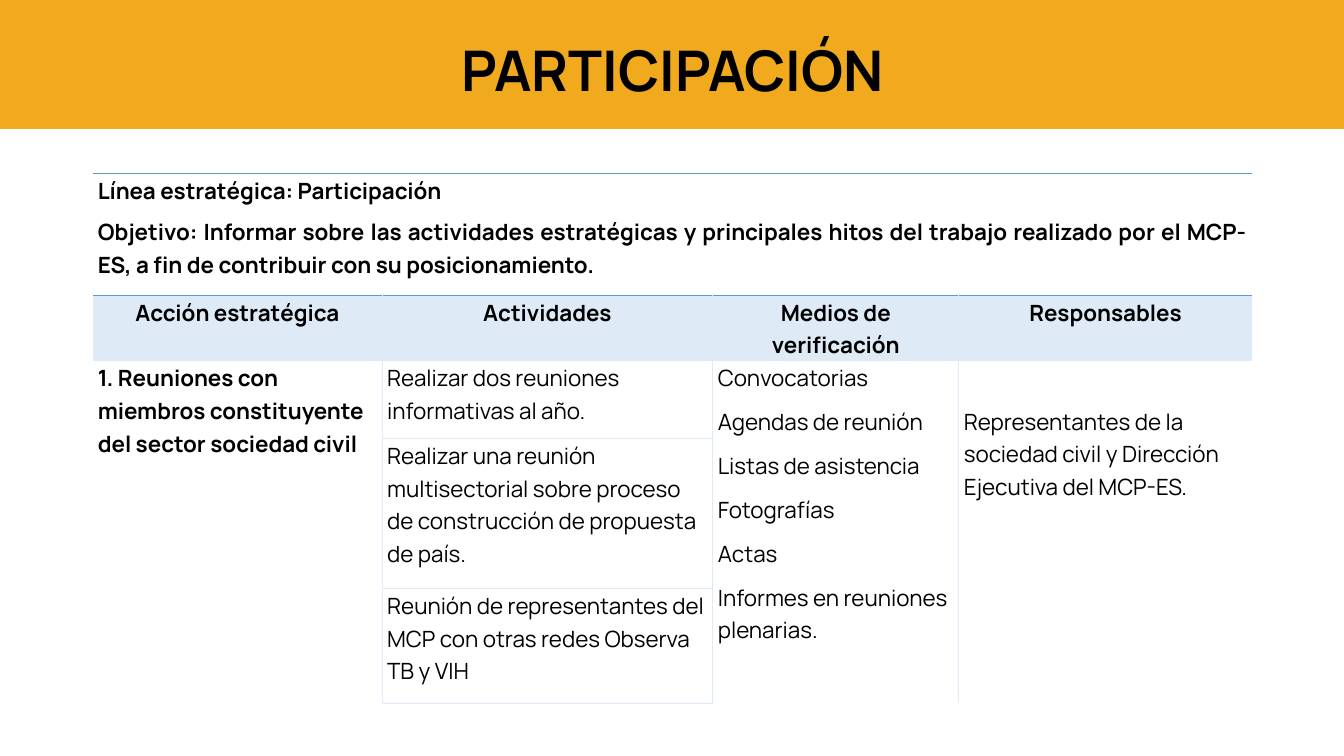
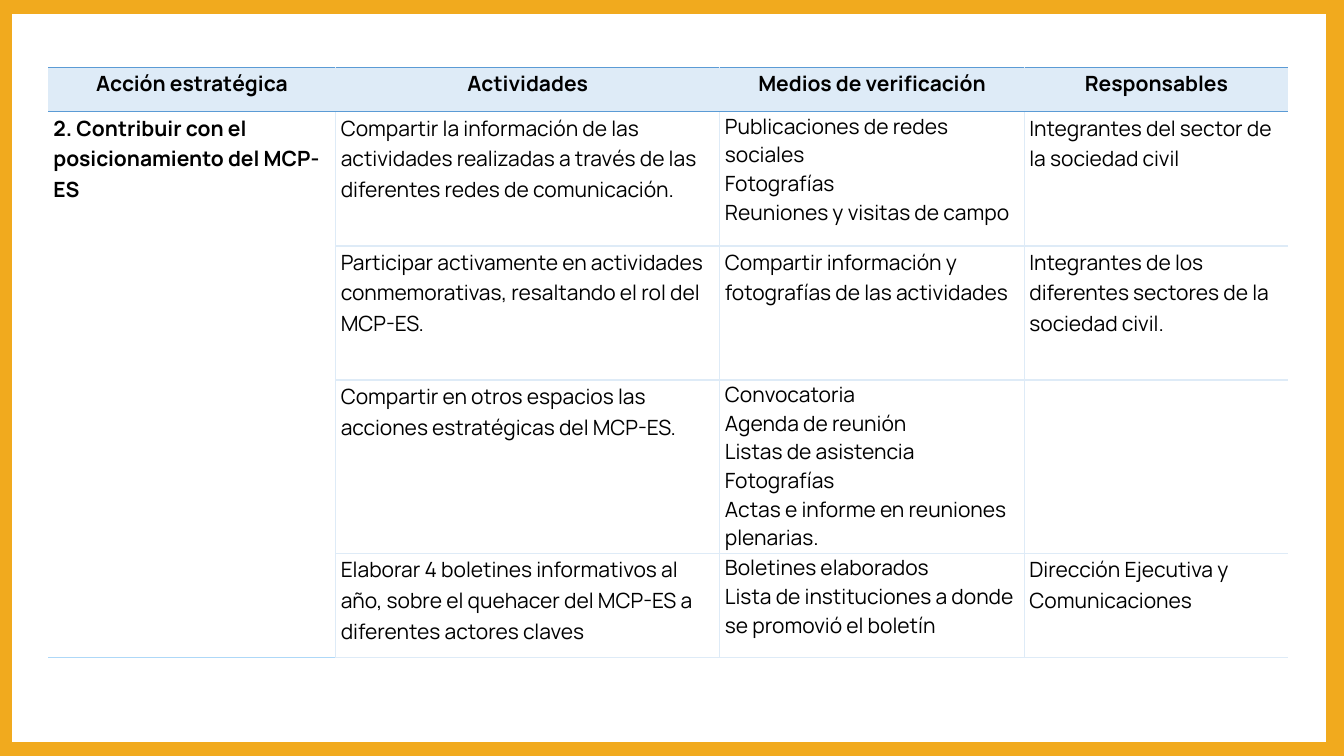
import lxml.etree
import pptx
import pptx.dml.color
import pptx.enum.shapes
import pptx.enum.text
import pptx.oxml.ns
import pptx.util

Inches = pptx.util.Inches
Align = pptx.enum.text.PP_ALIGN
Anchor = pptx.enum.text.MSO_ANCHOR

COLORS = {
    "amber": "F1AA1E",
    "white": "FFFFFF",
    "black": "000000",
    "header": "DEEBF7",
    "blue": "5B9BD5",
    "sky": "AED8F8",
}
FONT = "Manrope"
SLIDE_WIDTH, SLIDE_HEIGHT = 13.33, 7.5
RULES = {"B": "blue", "P": "header", "S": "sky", "-": None}
HEADINGS = ["Acción estratégica", "Actividades", "Medios de verificación", "Responsables"]

PARTICIPATION = {
    "box": (0.92, 1.72, 11.5, 5.26),
    "columns": [2.87, 3.28, 2.44, 2.91],
    "rows": [1.21, 0.65, 0.77, 1.49, 1.14],
    "size": 16,
    "header_row": 1,
    "tight_lists": False,
    "rules": ["BBBB", "BBBB", "----", "-P--", "-P--", "BPBB"],
    "merges": [((0, 0), (0, 3)), ((2, 0), (4, 0)), ((2, 2), (4, 2)), ((2, 3), (4, 3))],
    "texts": [
        ["Línea estratégica: Participación\n"
         "Objetivo: Informar sobre las actividades estratégicas y principales hitos del "
         "trabajo realizado por el MCP-ES, a fin de contribuir con su posicionamiento."],
        HEADINGS,
        ["1. Reuniones con miembros constituyente del sector sociedad civil",
         "Realizar dos reuniones informativas al año.",
         "Convocatorias\nAgendas de reunión\nListas de asistencia\nFotografías\nActas\n"
         "Informes en reuniones plenarias.",
         "Representantes de la sociedad civil y Dirección Ejecutiva del MCP-ES."],
        ["", "Realizar una reunión multisectorial sobre proceso de construcción de "
         "propuesta de país."],
        ["", "Reunión de representantes del MCP con otras redes Observa TB y VIH"],
    ],
}

POSITIONING = {
    "box": (0.48, 0.67, 12.3, 5.85),
    "columns": [2.85, 3.81, 3.02, 2.62],
    "rows": [0.44, 1.33, 1.33, 1.72, 1.03],
    "size": 15,
    "header_row": 0,
    "tight_lists": True,
    "rules": ["BBBB", "BBBB", "-PPP", "-PPP", "-PPP", "SPPP"],
    "merges": [((1, 0), (3, 0))],
    "texts": [
        HEADINGS,
        ["2. Contribuir con el posicionamiento del MCP-ES",
         "Compartir la información de las actividades realizadas a través de las "
         "diferentes redes de comunicación.",
         "Publicaciones de redes sociales\nFotografías\nReuniones y visitas de campo",
         "Integrantes del sector de la sociedad civil"],
        ["", "Participar activamente en actividades conmemorativas, resaltando el rol del MCP-ES.",
         "Compartir información y fotografías de las actividades",
         "Integrantes de los diferentes sectores de la sociedad civil."],
        ["", "Compartir en otros espacios las acciones estratégicas del MCP-ES.",
         "Convocatoria\nAgenda de reunión\nListas de asistencia\nFotografías\n"
         "Actas e informe en reuniones plenarias."],
        ["", "Elaborar 4 boletines informativos al año, sobre el quehacer del MCP-ES a "
         "diferentes actores claves",
         "Boletines elaborados\nLista de instituciones a donde se promovió el boletín",
         "Dirección Ejecutiva y Comunicaciones"],
    ],
}


def rgb(name):
    """Return the named palette colour."""
    return pptx.dml.color.RGBColor.from_string(COLORS[name])


def style_para(para, size, bold, align, line_spacing, space_after):
    """Format a paragraph and its runs."""
    para.alignment = align
    para.line_spacing = line_spacing
    para.space_after = pptx.util.Pt(space_after)
    for span in para.runs:
        span.font.name = FONT
        span.font.size = pptx.util.Pt(size)
        span.font.bold = bold
        span.font.color.rgb = rgb("black")


def add_panel(page, box, color):
    """Add a flat filled rectangle."""
    panel = page.shapes.add_shape(
        pptx.enum.shapes.MSO_SHAPE.RECTANGLE, *(Inches(length) for length in box))
    panel.shadow.inherit = False
    panel.fill.solid()
    panel.fill.fore_color.rgb = rgb(color)
    panel.line.fill.background()


def add_title(page, text, box):
    """Place the title placeholder in its box."""
    title = page.shapes.title
    title.left, title.top, title.width, title.height = (Inches(length) for length in box)
    title.text_frame.text = text
    title.text_frame.vertical_anchor = Anchor.MIDDLE
    style_para(title.text_frame.paragraphs[0], 40, True, Align.CENTER, 0.9, 0)


def set_border(cell, side, color):
    """Draw one cell border, or hide it when there is no colour."""
    properties = cell._tc.get_or_add_tcPr()
    qn = pptx.oxml.ns.qn
    line = lxml.etree.SubElement(properties, qn("a:ln" + side), w=str(pptx.util.Pt(1)))
    if color is None:
        lxml.etree.SubElement(line, qn("a:noFill"))
    else:
        fill = lxml.etree.SubElement(line, qn("a:solidFill"))
        lxml.etree.SubElement(fill, qn("a:srgbClr"), val=COLORS[color])


def format_cell(cell, row, column, plan):
    """Apply borders, fill and margins to one cell."""
    has_sides = row >= plan["header_row"]
    last_column = len(plan["columns"]) - 1
    set_border(cell, "L", "header" if has_sides and column > 0 else None)
    set_border(cell, "R", "header" if has_sides and column < last_column else None)
    set_border(cell, "T", RULES[plan["rules"][row][column]])
    set_border(cell, "B", RULES[plan["rules"][row + 1][column]])
    cell.fill.solid()
    cell.fill.fore_color.rgb = rgb("header" if row == plan["header_row"] else "white")
    cell.margin_left = cell.margin_right = Inches(0.05)
    cell.margin_top = cell.margin_bottom = 0
    cell.vertical_anchor = Anchor.TOP


def fill_cell(cell, text, row, column, plan):
    """Write the text of one cell."""
    cell.text_frame.text = text
    paras = cell.text_frame.paragraphs
    is_intro = row < plan["header_row"]
    is_header = row == plan["header_row"]
    tight = plan["tight_lists"] and len(paras) > 1
    for para in paras:
        style_para(
            para, plan["size"], is_intro or is_header or column == 0,
            Align.CENTER if is_header else Align.LEFT,
            1.0 if tight else 1.07, 0 if tight else 6 if is_intro else 8)


def add_plan_table(page, plan):
    """Build an action plan table and return it."""
    box = (Inches(length) for length in plan["box"])
    table = page.shapes.add_table(len(plan["rows"]), len(plan["columns"]), *box).table
    table.first_row = table.horz_banding = False
    for column, width in enumerate(plan["columns"]):
        table.columns[column].width = Inches(width)
    for row, height in enumerate(plan["rows"]):
        table.rows[row].height = Inches(height)
        for column in range(len(plan["columns"])):
            format_cell(table.cell(row, column), row, column, plan)
        for column, text in enumerate(plan["texts"][row]):
            if text:
                fill_cell(table.cell(row, column), text, row, column, plan)
    for first, last in plan["merges"]:
        table.cell(*first).merge(table.cell(*last))
    return table


def build_participation(deck):
    """Build the slide with the title band and the first plan."""
    page = deck.slides.add_slide(deck.slide_layouts[5])
    add_panel(page, (0, 0, SLIDE_WIDTH, 1.28), "amber")
    add_title(page, "PARTICIPACIÓN", (0.92, 0, 11.5, 1.45))
    page.shapes._spTree.append(page.shapes.title._element)
    table = add_plan_table(page, PARTICIPATION)
    table.cell(0, 0).text_frame.paragraphs[1].alignment = Align.JUSTIFY
    table.cell(2, 3).margin_top = Inches(0.43)


def build_positioning(deck):
    """Build the framed slide with the second plan."""
    page = deck.slides.add_slide(deck.slide_layouts[6])
    add_panel(page, (0, 0, SLIDE_WIDTH, SLIDE_HEIGHT), "amber")
    add_panel(page, (0.12, 0.14, 13.03, 7.22), "white")
    add_plan_table(page, POSITIONING)


def main():
    """Build and save the deck."""
    deck = pptx.Presentation()
    deck.slide_width = Inches(SLIDE_WIDTH)
    deck.slide_height = Inches(SLIDE_HEIGHT)
    build_participation(deck)
    build_positioning(deck)
    deck.save("out.pptx")


if __name__ == "__main__":
    main()
